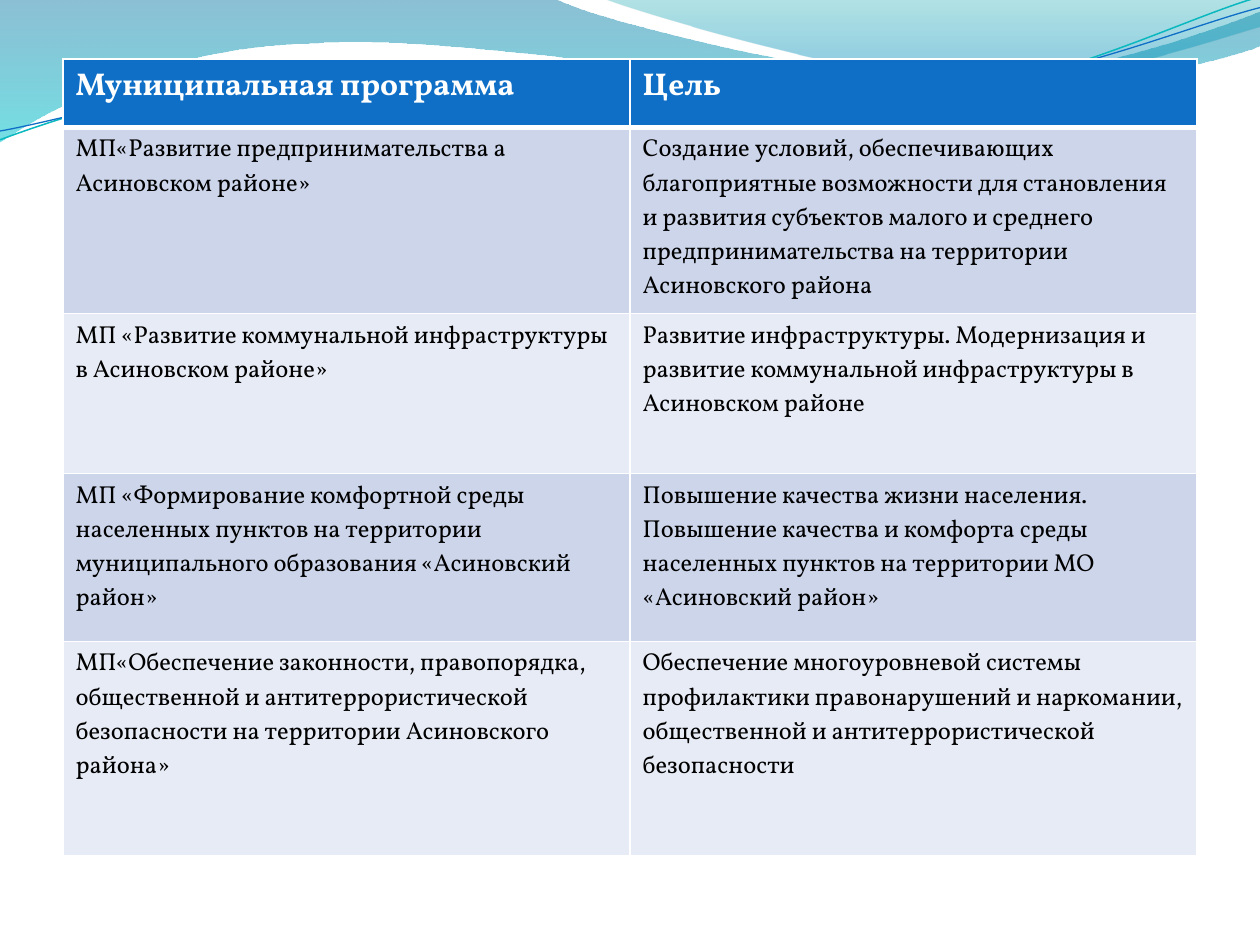
"""Build a slide with a table of municipal programmes and their goals under a wave header."""
import math

from lxml import etree
from pptx import Presentation
from pptx.dml.color import RGBColor
from pptx.oxml.ns import qn
from pptx.util import Inches, Pt

WHITE = RGBColor(0xFF, 0xFF, 0xFF)
BLACK = RGBColor(0x00, 0x00, 0x00)
BLUE = RGBColor(0x0F, 0x6F, 0xC6)
TEAL = RGBColor(0x0A, 0xB8, 0xBF)
DEEP_BLUE = RGBColor(0x00, 0x74, 0xA1)
CYAN = RGBColor(0x00, 0xC6, 0xCF)
SEA_GREEN = RGBColor(0x00, 0xA1, 0xA9)
SKY_BLUE = RGBColor(0x00, 0x8B, 0xBF)
BAND_DARK = RGBColor(0xCC, 0xD5, 0xEA)
BAND_LIGHT = RGBColor(0xE7, 0xEB, 0xF5)
FONT = "Vollkorn"
TILT = 357.3

WAVES = [
    ((-0.01, -0.01, 10.02, 1.14),
     [(0, 0), (4.4, -0.01), (4.76, 0.17, 6.64, 0.63, 7.58, 0.63),
      (8.53, 0.63, 9.58, 0.26, 10, 0.09), (10.01, 0.36),
      (9.83, 0.44, 8.7, 0.76, 7.46, 0.75), (6.22, 0.75, 3.82, 0.28, 2.57, 0.34),
      (1.29, 0.36, 0.46, 0.83, -0.01, 1.13), (0, 0)],
     [(0, DEEP_BLUE, 45), (1, CYAN, 55)]),
    ((4.79, -0.01, 5.21, 0.7),
     [(4.79, -0.01), (5.09, 0.11, 6.82, 0.62, 7.69, 0.65),
      (8.56, 0.69, 9.61, 0.32, 10, 0.21), (10, 0), (4.79, -0.01)],
     [(0, SEA_GREEN, 30), (0.8, SKY_BLUE, 45)]),
]
WAVE_LINES = [
    ((-0.02, 0.22, 10.02, 0.71),
     [(0, 1.11), (0.48, 0.93, 1.58, 0.57, 2.77, 0.52),
      (3.95, 0.47, 5.93, 0.89, 7.13, 0.8), (8.33, 0.71, 9.38, 0.15, 9.98, -0.02)],
     TEAL, 0.85),
    ((-0.02, 0.3, 10.03, 0.58),
     [(0, 1.04), (0.47, 0.96, 1.64, 0.61, 2.83, 0.56),
      (4.03, 0.51, 5.97, 0.84, 7.17, 0.75), (8.36, 0.67, 9.41, 0.21, 10, 0.06)],
     BLUE, 0.75),
]
ROW_HEIGHTS = [0.54, 1.48, 1.27, 1.33, 1.7]
ROWS = [
    ("Муниципальная программа", "Цель"),
    ("МП«Развитие предпринимательства а Асиновском районе»",
     "Создание условий, обеспечивающих благоприятные возможности для становления "
     "и развития субъектов малого и среднего предпринимательства на территории "
     "Асиновского района"),
    ("МП «Развитие коммунальной инфраструктуры в Асиновском районе»",
     "Развитие инфраструктуры. Модернизация и развитие коммунальной "
     "инфраструктуры в Асиновском районе"),
    ("МП «Формирование комфортной среды населенных пунктов на территории "
     "муниципального образования «Асиновский район»",
     "Повышение качества жизни населения. Повышение качества и комфорта среды "
     "населенных пунктов на территории МО «Асиновский район»"),
    ("МП«Обеспечение законности, правопорядка, общественной и "
     "антитеррористической безопасности на территории Асиновского района»",
     "Обеспечение многоуровневой системы профилактики правонарушений и "
     "наркомании, общественной и антитеррористической безопасности"),
]


def draw_outline(page, frame, segments, rotation=0):
    """Draw lines (two numbers) and curves (six) placed on the page in a turned frame."""
    left, top, width, height = frame
    builder = page.shapes.build_freeform(Inches(left), Inches(top))
    builder.add_line_segments([(Inches(left + width), Inches(top + height))],
                              close=False)
    outline = builder.convert_to_shape()
    outline.shadow.inherit = False
    outline.rotation = rotation
    track = next(outline._element.iter(qn("a:path")))
    for command in list(track):
        track.remove(command)
    cosine, sine = math.cos(math.radians(-rotation)), math.sin(math.radians(-rotation))
    for index, segment in enumerate(segments):
        kind = "cubicBezTo" if len(segment) == 6 else "lnTo" if index else "moveTo"
        command = etree.SubElement(track, qn(f"a:{kind}"))
        for x, y in zip(segment[::2], segment[1::2]):
            across, down = x - left - width / 2, y - top - height / 2
            etree.SubElement(
                command, qn("a:pt"),
                x=str(Inches(width / 2 + across * cosine - down * sine)),
                y=str(Inches(height / 2 + across * sine + down * cosine)))
    if segments[0] == segments[-1]:
        etree.SubElement(track, qn("a:close"))
    return outline


def write_cell(cell, text, *, size, color, bold, fill, borders):
    """Write text in a cell and set its font, fill and border widths."""
    span = cell.text_frame.paragraphs[0].add_run()
    span.text = text
    span.font.name = FONT
    span.font.size = Pt(size)
    span.font.bold = bold
    span.font.color.rgb = color
    properties = cell._tc.get_or_add_tcPr()
    for side, width in borders.items():
        border = etree.SubElement(properties, qn(f"a:ln{side}"), w=str(Pt(width)))
        paint = etree.SubElement(border, qn("a:solidFill"))
        etree.SubElement(paint, qn("a:srgbClr"), val=str(WHITE))
    cell.fill.solid()
    cell.fill.fore_color.rgb = fill


deck = Presentation()
deck.slide_width = Inches(10)
deck.slide_height = Inches(7.5)
page = deck.slides.add_slide(deck.slide_layouts[6])
page.background.fill.solid()
page.background.fill.fore_color.rgb = WHITE

for frame, segments, stops in WAVES:
    wave = draw_outline(page, frame, segments)
    wave.line.fill.background()
    wave.fill.gradient()
    wave.fill.gradient_angle = 270
    for stop, (position, color, opacity) in zip(wave.fill.gradient_stops, stops):
        stop.position = position
        stop.color.rgb = color
    shades = wave._element.spPr.iter(qn("a:srgbClr"))
    for shade, (position, color, opacity) in zip(shades, stops):
        etree.SubElement(shade, qn("a:alpha"), val=str(opacity * 1000))

for frame, segments, color, width in WAVE_LINES:
    wave_line = draw_outline(page, frame, segments, TILT)
    wave_line.fill.background()
    wave_line.line.color.rgb = color
    wave_line.line.width = Pt(width)

table = page.shapes.add_table(len(ROWS), 2, Inches(0.5), Inches(0.47),
                              Inches(9), Inches(sum(ROW_HEIGHTS))).table
for column in table.columns:
    column.width = Inches(4.5)
for index, (height, texts) in enumerate(zip(ROW_HEIGHTS, ROWS)):
    table.rows[index].height = Inches(height)
    header = index == 0
    band = BAND_DARK if index % 2 else BAND_LIGHT
    borders = {"L": 1, "R": 1, "T": 3 if index == 1 else 1, "B": 3 if header else 1}
    for column, text in enumerate(texts):
        write_cell(table.cell(index, column), text, size=18 if header else 14,
                   color=WHITE if header else BLACK, bold=header,
                   fill=BLUE if header else band, borders=borders)

deck.save("out.pptx")
